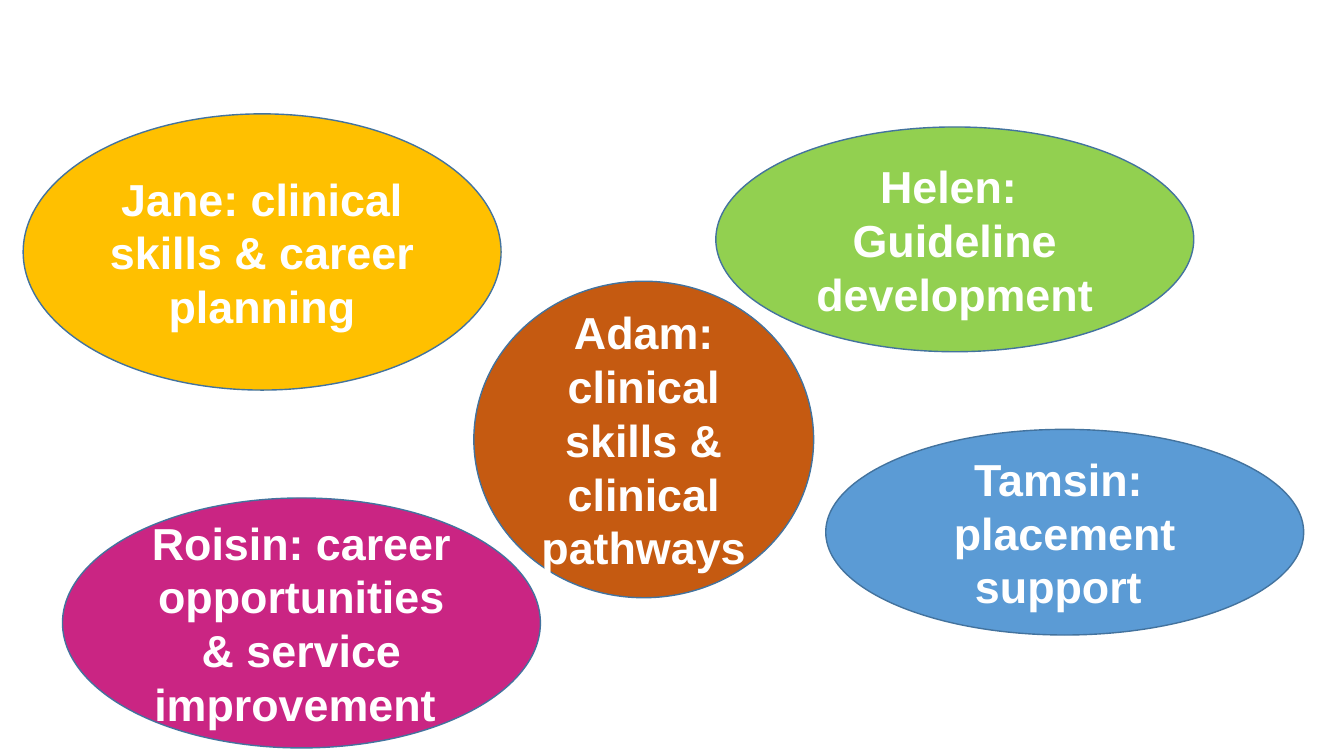
from pptx import Presentation
from pptx.dml.color import RGBColor
from pptx.enum.shapes import MSO_SHAPE
from pptx.enum.text import MSO_ANCHOR, PP_ALIGN
from pptx.util import Inches, Pt

OVAL = MSO_SHAPE.OVAL
MIDDLE = MSO_ANCHOR.MIDDLE
CENTER = PP_ALIGN.CENTER

GOLD = RGBColor(0xFF, 0xC0, 0x00)
GREEN = RGBColor(0x92, 0xD0, 0x50)
BLUE = RGBColor(0x5B, 0x9B, 0xD5)
MAGENTA = RGBColor(0xCA, 0x25, 0x83)
RUST = RGBColor(0xC5, 0x5A, 0x11)
OUTLINE = RGBColor(0x43, 0x73, 0x9E)
WHITE = RGBColor(0xFF, 0xFF, 0xFF)

OUTER_WIDTH = 4.74
ADAM_WIDTH = 3.37

ROLES = [
    ("Jane: clinical skills & career planning", GOLD, (0.23, 1.13, OUTER_WIDTH, 2.74)),
    ("Helen:  Guideline development", GREEN, (7.1, 1.26, OUTER_WIDTH, 2.23)),
    ("Tamsin:  placement support ", BLUE, (8.19, 4.26, OUTER_WIDTH, 2.04)),
    ("Roisin: career opportunities & service improvement ", MAGENTA,
     (0.62, 4.94, OUTER_WIDTH, 2.48)),
    ("Adam: clinical skills & clinical pathways", RUST, (4.7, 2.79, ADAM_WIDTH, 3.14)),
]


def add_role(slide, role, color, bounds):
    bubble = slide.shapes.add_shape(OVAL, *map(Inches, bounds))
    bubble.shadow.inherit = False
    bubble.fill.solid()
    bubble.fill.fore_color.rgb = color
    bubble.line.color.rgb = OUTLINE
    bubble.line.width = Pt(1)

    frame = bubble.text_frame
    frame.word_wrap = True
    frame.vertical_anchor = MIDDLE
    paragraph = frame.paragraphs[0]
    paragraph.alignment = CENTER
    run = paragraph.add_run()
    run.text = role
    run.font.name = "Arial"
    run.font.size = Pt(32)
    run.font.bold = True
    run.font.color.rgb = WHITE


def main():
    deck = Presentation()
    deck.slide_width = Inches(13.33)
    deck.slide_height = Inches(7.5)
    slide = deck.slides.add_slide(deck.slide_layouts.get_by_name("Blank"))
    for role, color, bounds in ROLES:
        add_role(slide, role, color, bounds)
    deck.save("out.pptx")


if __name__ == "__main__":
    main()
